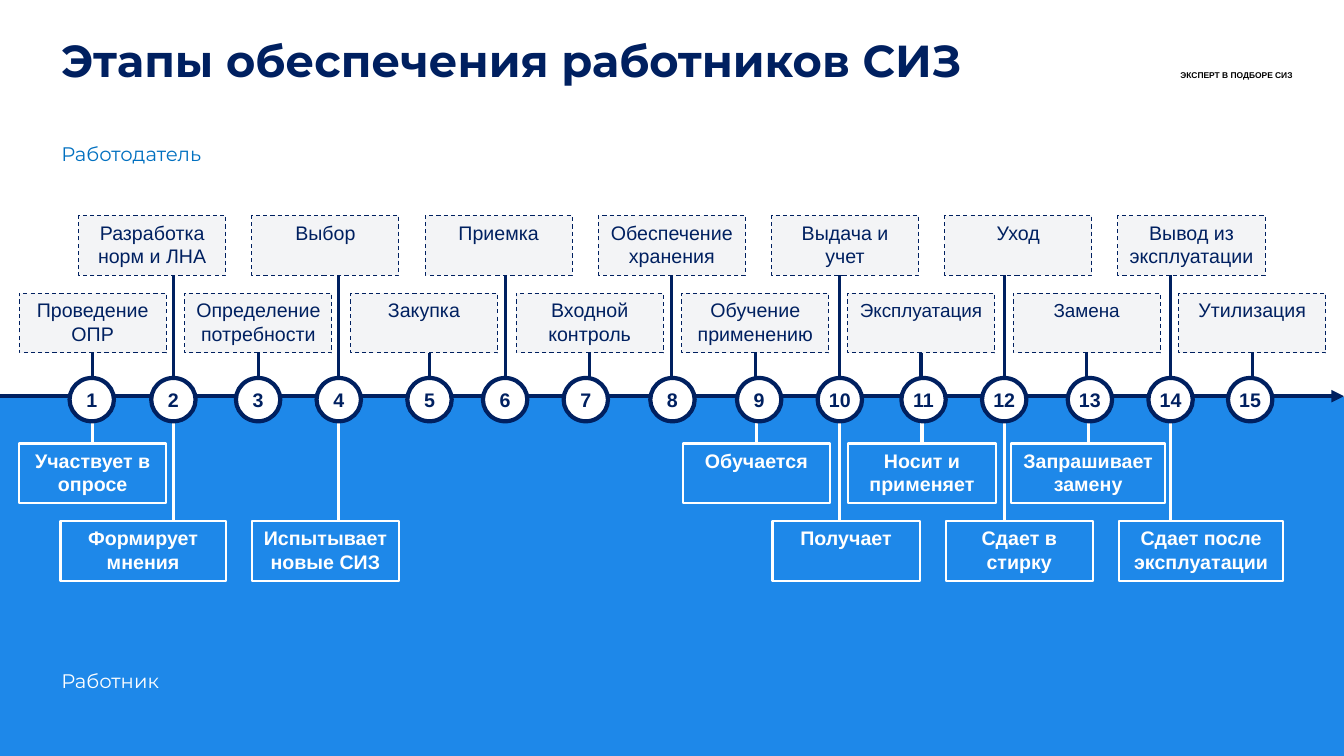
import pptx
import pptx.dml.color
import pptx.enum.dml
import pptx.enum.shapes
import pptx.enum.text
import pptx.oxml.ns
import pptx.oxml.xmlchemy
import pptx.util
from lxml import etree

inch = pptx.util.Inches
rgb = pptx.dml.color.RGBColor.from_string
qn = pptx.oxml.ns.qn
PRESET = pptx.enum.shapes.MSO_SHAPE
ALIGN = pptx.enum.text.PP_ALIGN
ANCHOR = pptx.enum.text.MSO_ANCHOR
DASH = pptx.enum.dml.MSO_LINE.DASH
STRAIGHT = pptx.enum.shapes.MSO_CONNECTOR.STRAIGHT
NAVY, WHITE, BLUE, GREY = "002060", "FFFFFF", "1E88E9", "F3F4F6"


def write(sp, text, size=14, font="Arial", color=NAVY, bold=False,
          align=ALIGN.CENTER, anchor=ANCHOR.TOP, wrap=True, inset=0.1):
    tf = sp.text_frame
    tf.auto_size = pptx.enum.text.MSO_AUTO_SIZE.NONE
    tf.word_wrap = wrap
    tf.vertical_anchor = anchor
    tf.margin_left = tf.margin_right = inch(inset)
    tf.margin_top = tf.margin_bottom = inch(inset / 2)
    p = tf.paragraphs[0]
    p.alignment = align
    r = p.add_run()
    r.text = text
    r.font.size, r.font.name, r.font.bold = pptx.util.Pt(size), font, bold
    r.font.color.rgb = rgb(color)
    return p


def draw(kind, x, y, w, h, fill=None, line=None, weight=1.5, dash=None):
    sp = s.shapes.add_shape(kind, inch(x), inch(y), inch(w), inch(h))
    sp.shadow.inherit = False
    if fill:
        sp.fill.solid()
        sp.fill.fore_color.rgb = rgb(fill)
    else:
        sp.fill.background()
    if line:
        sp.line.color.rgb = rgb(line)
        sp.line.width = pptx.util.Pt(weight)
        sp.line.dash_style = dash
    else:
        sp.line.fill.background()
    return sp


prs = pptx.Presentation()
W, H = 13.33, 7.5
prs.slide_width, prs.slide_height = inch(W), inch(H)
s = prs.slides.add_slide(prs.slide_layouts[5])

# Title
title = s.shapes.title
title.left, title.top, title.width, title.height = map(inch, (0.51, 0.27, 11.53, 1.41))
p = write(title, "Этапы обеспечения работников СИЗ", size=32, font="Montserrat",
          bold=True, align=ALIGN.LEFT)
p.line_spacing = pptx.util.Pt(39)

# Lower band for the worker
AXIS = 3.93
draw(PRESET.RECTANGLE, 0, AXIS + 0.01, W, H - AXIS - 0.01, fill=BLUE)

# Tagline and the names of the two sides
for text, x, y, w, h, fmt in [
    ("ЭКСПЕРТ В ПОДБОРЕ СИЗ", 11.61, 0.65, 1.45, 0.2,
     dict(size=6, color="000000", bold=True)),
    ("Работодатель", 0.51, 1.36, 1.73, 0.34,
     dict(font="Montserrat", color="0070C0", wrap=False)),
    ("Работник", 0.51, 6.59, 1.24, 0.34,
     dict(font="Montserrat", color=WHITE, wrap=False)),
]:
    sp = s.shapes.add_textbox(inch(x), inch(y), inch(w), inch(h))
    write(sp, text, align=ALIGN.LEFT, **fmt)

# Stages: centre of the circle, employer's step
stages = [
    (0.91, "Проведение ОПР"), (1.72, "Разработка норм и ЛНА"),
    (2.56, "Определение потребности"), (3.36, "Выбор"),
    (4.26, "Закупка"), (5.01, "Приемка"),
    (5.81, "Входной контроль"), (6.67, "Обеспечение хранения"),
    (7.53, "Обучение применению"), (8.33, "Выдача и учет"),
    (9.16, "Эксплуатация"), (9.96, "Уход"),
    (10.81, "Замена"), (11.61, "Вывод из эксплуатации"),
    (12.4, "Утилизация"),
]
# Worker's step by stage: text, shift of the left side, width
worker = {
    1: ("Участвует в опросе", 0, 1.46), 2: ("Формирует мнения", -0.18, 1.64),
    4: ("Испытывает новые СИЗ", 0, 1.46), 9: ("Обучается", 0.01, 1.46),
    10: ("Получает", 0.01, 1.46), 11: ("Носит и применяет", 0.01, 1.46),
    12: ("Сдает в стирку", 0.01, 1.46), 13: ("Запрашивает замену", -0.02, 1.53),
    14: ("Сдает после эксплуатации", 0.01, 1.63),
}
BOX_W, BOX_H, D = 1.46, 0.59, 0.44
lines = []

# Boxes in two staggered rows on each side, with stems to the axis
for n, (cx, step) in enumerate(stages, 1):
    k, even = divmod(n - 1, 2)
    left = 0.78 + 1.718 * k if even else 0.19 + 1.643 * k
    top = 2.14 if even else 2.91
    sp = draw(PRESET.RECTANGLE, left, top, BOX_W, BOX_H, GREY, NAVY, 0.75, DASH)
    write(sp, step, size=13.5 if n in (11, 13) else 14)
    sides = [(sp, left + BOX_W / 2, top + BOX_H, 3.75, 2, NAVY)]
    if n in worker:
        text, shift, width = worker[n]
        low = 5.17 if even else 4.4
        sp = draw(PRESET.RECTANGLE, left + shift, low, width, BOX_H, line=WHITE)
        write(sp, text, color=WHITE, bold=True)
        sides.append((sp, left + shift + width / 2, low, 4.15, 0, WHITE))
    for box, middle, edge, end, site, color in sides:
        joined = abs(middle - cx) < 0.05
        x = middle if joined else cx
        cn = s.shapes.add_connector(STRAIGHT, inch(x), inch(edge), inch(x), inch(end))
        if joined:
            cn.begin_connect(box, site)
        lines.append((cn, color, 2.25))

# Time axis
axis = s.shapes.add_connector(STRAIGHT, 0, inch(AXIS), inch(W), inch(AXIS))
lines.append((axis, NAVY, 3))
for cn, color, weight in lines:
    cn.line.color.rgb = rgb(color)
    cn.line.width = pptx.util.Pt(weight)
    etree.SubElement(cn._element.spPr, qn("a:effectLst"))
etree.SubElement(axis._element.spPr.find(qn("a:ln")), qn("a:tailEnd"), type="triangle")

# Numbered circles
for n, (cx, step) in enumerate(stages, 1):
    sp = draw(PRESET.OVAL, cx - D / 2, 3.75, D, 0.43, WHITE, NAVY, 3)
    write(sp, str(n), bold=True, anchor=ANCHOR.MIDDLE, wrap=False, inset=0)

prs.save("out.pptx")
